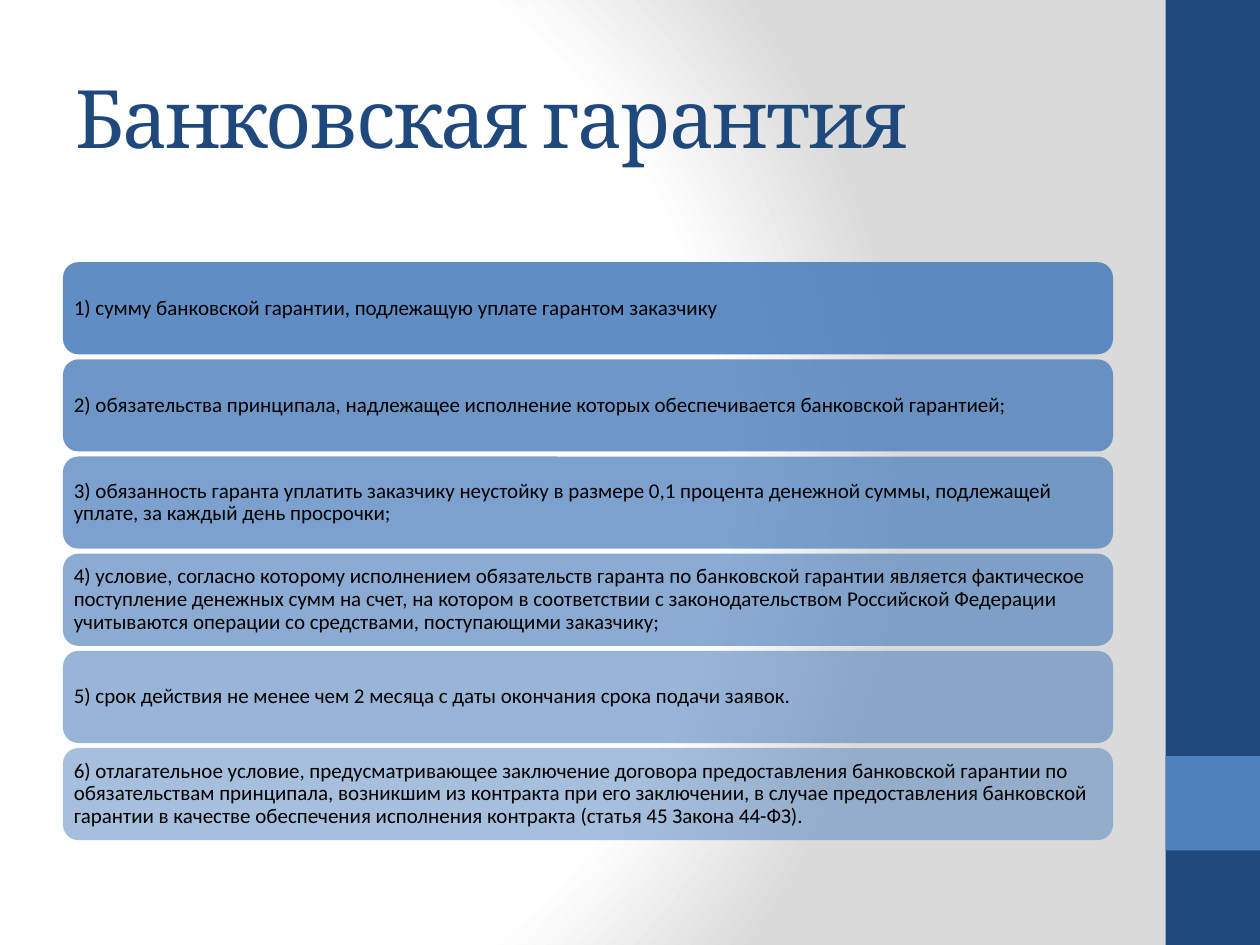
from dataclasses import dataclass

from lxml.etree import SubElement
from pptx import Presentation
from pptx.dml.color import RGBColor
from pptx.enum.shapes import MSO_SHAPE
from pptx.enum.text import MSO_ANCHOR, PP_ALIGN
from pptx.oxml import parse_xml
from pptx.oxml.ns import nsdecls, qn
from pptx.util import Pt


@dataclass(frozen=True)
class Theme:
    navy: str = "1F497D"
    blue: str = "4F81BD"
    black: str = "000000"
    white: str = "FFFFFF"
    grey: str = "DADADA"
    title_font: str = "Cambria"
    body_font: str = "Calibri"
    title_size: int = 46
    body_size: int = 12


THEME = Theme()

CONDITIONS = [
    "1) сумму банковской гарантии, подлежащую уплате гарантом заказчику",
    "2) обязательства принципала, надлежащее исполнение которых обеспечивается "
    "банковской гарантией;",
    "3) обязанность гаранта уплатить заказчику неустойку в размере 0,1 процента "
    "денежной суммы, подлежащей уплате, за каждый день просрочки;",
    "4) условие, согласно которому исполнением обязательств гаранта по банковской "
    "гарантии является фактическое поступление денежных сумм на счет, на котором в "
    "соответствии с законодательством Российской Федерации учитываются операции со "
    "средствами, поступающими заказчику;",
    "5) срок действия не менее чем 2 месяца с даты окончания срока подачи заявок.",
    "6) отлагательное условие, предусматривающее заключение договора предоставления "
    "банковской гарантии по обязательствам принципала, возникшим из контракта при "
    "его заключении, в случае предоставления банковской гарантии в качестве "
    "обеспечения исполнения контракта (статья 45 Закона 44-ФЗ).",
]


def set_background(slide):
    """Radial gradient from white to grey."""
    slide.background.fill.gradient()
    linear = slide.background._cSld.xpath(".//a:gradFill")[0]
    stops = "".join(
        f'<a:gs pos="{position * 1000}"><a:srgbClr val="{color}"/></a:gs>'
        for position, color in ((0, THEME.white), (75, THEME.white), (100, THEME.grey))
    )
    radial = parse_xml(
        f'<a:gradFill {nsdecls("a")} rotWithShape="1"><a:gsLst>{stops}</a:gsLst>'
        '<a:path path="circle">'
        '<a:fillToRect l="20000" t="50000" r="100000" b="50000"/>'
        "</a:path></a:gradFill>"
    )
    linear.getparent().replace(linear, radial)


def add_block(slide, kind, left, top, width, height, color, opacity=100):
    shape = slide.shapes.add_shape(kind, Pt(left), Pt(top), Pt(width), Pt(height))
    shape.shadow.inherit = False
    shape.line.fill.background()
    shape.fill.solid()
    shape.fill.fore_color.rgb = RGBColor.from_string(color)
    if opacity < 100:
        color_element = shape._element.spPr.find(qn("a:solidFill"))[0]
        SubElement(color_element, qn("a:alpha"), val=str(opacity * 1000))
    return shape


def write_text(shape, text, font, size, color):
    frame = shape.text_frame
    frame.word_wrap = True
    frame.vertical_anchor = MSO_ANCHOR.MIDDLE
    paragraph = frame.paragraphs[0]
    paragraph.alignment = PP_ALIGN.LEFT
    run = paragraph.add_run()
    run.text = text
    run.font.name = font
    run.font.size = Pt(size)
    run.font.color.rgb = RGBColor.from_string(color)
    return paragraph


def add_title(slide, text):
    box = slide.shapes.add_textbox(Pt(36), Pt(21.6), Pt(600), Pt(90))
    paragraph = write_text(box, text, THEME.title_font, THEME.title_size, THEME.navy)
    # Tighten the letters by one point
    paragraph.runs[0].font._element.set("spc", "-100")


def add_condition(slide, index, text):
    top, pitch = 149.8, 55.53
    card = add_block(slide, MSO_SHAPE.ROUNDED_RECTANGLE, 36, top + index * pitch,
                     600, 52.65, THEME.blue, opacity=90 - 8 * index)
    paragraph = write_text(card, text, THEME.body_font, THEME.body_size, THEME.black)
    paragraph.line_spacing = 0.9
    frame = card.text_frame
    frame.margin_left = frame.margin_right = Pt(3.6)
    frame.margin_top = frame.margin_bottom = Pt(3.6)


def main():
    presentation = Presentation()
    presentation.slide_width, presentation.slide_height = Pt(720), Pt(540)
    slide = presentation.slides.add_slide(presentation.slide_layouts[6])
    set_background(slide)

    # Side band with its accent square
    add_block(slide, MSO_SHAPE.RECTANGLE, 666, 0, 54, 540, THEME.navy)
    add_block(slide, MSO_SHAPE.RECTANGLE, 666, 432, 54, 54, THEME.blue)

    # Title and the fading list of conditions
    add_title(slide, "Банковская гарантия")
    for index, text in enumerate(CONDITIONS):
        add_condition(slide, index, text)

    presentation.save("out.pptx")


if __name__ == "__main__":
    main()
